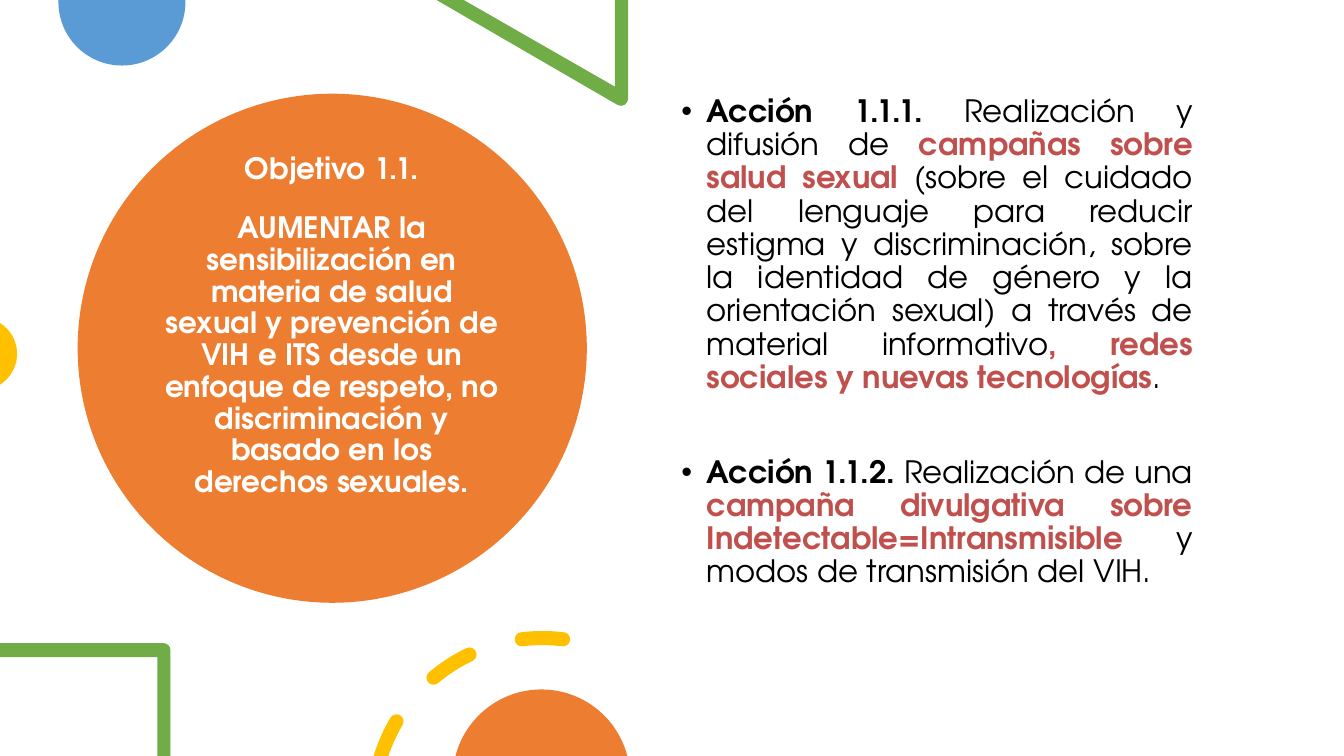
from dataclasses import dataclass
from math import cos, radians, sin, tan

from lxml.etree import SubElement
from pptx import Presentation
from pptx.dml.color import RGBColor
from pptx.enum.shapes import MSO_SHAPE
from pptx.enum.text import MSO_ANCHOR, MSO_AUTO_SIZE, PP_ALIGN
from pptx.oxml.ns import qn
from pptx.util import Inches, Pt

FONT = "TeX Gyre Adventor"
ORANGE, BLUE, GREEN, GOLD = "ED7D31", "5B9BD5", "70AD47", "FFC000"
BLACK, WHITE, RED = "000000", "FFFFFF", "C0504D"
# A step of two numbers is a straight line, one of six a cubic curve.
Steps = list[tuple[float, ...]]


@dataclass
class Outline:
    fill: str
    rings: list[Steps]


@dataclass
class Run:
    text: str
    color: str = BLACK
    bold: bool = False


@dataclass
class Item:
    runs: list[Run]
    format: dict
    bullet: bool = False


def arc(x: float, y: float, size: float, start: float, end: float,
        parts: int = 1) -> Steps:
    """Circle arc as curves, with angles in degrees clockwise from the right."""
    turn = radians(end - start) / parts
    pull = size * 4 / 3 * tan(turn / 4)
    steps: Steps = [(x + size * cos(radians(start)), y + size * sin(radians(start)))]
    for i in range(parts):
        a = radians(start) + turn * i
        b = a + turn
        ax, ay = x + size * cos(a), y + size * sin(a)
        bx, by = x + size * cos(b), y + size * sin(b)
        steps.append((ax - pull * sin(a), ay + pull * cos(a),
                      bx + pull * sin(b), by - pull * cos(b), bx, by))
    return steps


def dash(start: float, end: float, cut: float | None = None) -> Steps:
    """Round-ended piece of the gold ring; cut is the inner angle of a flat start."""
    x, y, mid, half = 5.38, 8.01, 1.68, 0.07

    def cap(turn: float, first: float) -> Steps:
        t = radians(turn)
        return arc(x + mid * cos(t), y + mid * sin(t), half, first, first + 180, 2)[1:]

    inner = start if cut is None else cut
    steps = (arc(x, y, mid + half, start, end) + cap(end, end)
             + arc(x, y, mid - half, end, inner)[1:])
    return steps + cap(start, start + 180) if cut is None else steps


def tint(target, color: str) -> None:
    """Give a fill or a font a solid colour."""
    if hasattr(target, "solid"):
        target.solid()
        target.fore_color.rgb = RGBColor.from_string(color)
    else:
        target.color.rgb = RGBColor.from_string(color)


def paint(shape, color: str) -> None:
    shape.shadow.inherit = False
    tint(shape.fill, color)
    shape.line.fill.background()


def draw(shapes, outline: Outline) -> None:
    rings = [[tuple(Inches(n) for n in step) for step in ring]
             for ring in outline.rings]
    pen = shapes.build_freeform(*rings[0][0])
    for i, ring in enumerate(rings):
        if i:
            pen.move_to(*ring[0])
        pen.add_line_segments([step[-2:] for step in ring[1:]], close=True)
    shape = pen.convert_to_shape()
    paint(shape, outline.fill)

    lines = list(shape.element.iter(qn("a:lnTo")))
    steps = [step for ring in rings for step in ring[1:]]
    for line, step in zip(lines, steps):
        if len(step) == 6:
            line.tag = qn("a:cubicBezTo")
            line.remove(line[0])
            for x, y in zip(step[::2], step[1::2]):
                SubElement(line, qn("a:pt"), x=str(x - shape.left), y=str(y - shape.top))


def add_bullet(para) -> None:
    props = para._p.get_or_add_pPr()
    props.set("marL", str(Inches(0.25)))
    props.set("indent", str(Inches(-0.25)))
    tone = SubElement(props, qn("a:buClr"))
    SubElement(tone, qn("a:srgbClr"), val=BLACK)
    SubElement(props, qn("a:buFont"), typeface="Arial")
    SubElement(props, qn("a:buChar"), char="•")


def write(shape, box: tuple, frame: dict, items: list[Item], size: float) -> None:
    for name, value in zip(("left", "top", "width", "height"), box):
        setattr(shape, name, Inches(value))
    text = shape.text_frame
    for name, value in frame.items():
        setattr(text, name, value)
    for i, item in enumerate(items):
        para = text.add_paragraph() if i else text.paragraphs[0]
        for name, value in item.format.items():
            setattr(para, name, value)
        if item.bullet:
            add_bullet(para)
        for part in item.runs:
            run = para.add_run()
            run.text = part.text
            style = {"name": FONT, "size": Pt(size), "bold": part.bold}
            for name, value in style.items():
                setattr(run.font, name, value)
            tint(run.font, part.color)


FRAME = {"word_wrap": True, "auto_size": MSO_AUTO_SIZE.NONE,
         "margin_left": Inches(0.1), "margin_right": Inches(0.1),
         "margin_top": Inches(0.05), "margin_bottom": Inches(0.05),
         "vertical_anchor": MSO_ANCHOR.TOP}
CENTER = {"alignment": PP_ALIGN.CENTER, "line_spacing": 0.9, "space_before": Pt(0)}
SPREAD = {"alignment": PP_ALIGN.JUSTIFY, "line_spacing": 0.9}

GOAL = [
    Item([Run("Objetivo 1.1.", WHITE, True)], CENTER),
    Item([Run("AUMENTAR la sensibilización en materia de salud sexual y prevención "
              "de VIH e ITS desde un enfoque de respeto, no discriminación y basado "
              "en los derechos sexuales.", WHITE, True)],
         CENTER | {"space_before": Pt(19.5)}),
]
ACTIONS = [
    Item([Run("Acción 1.1.1.", bold=True),
          Run(" Realización y difusión de "),
          Run("campañas sobre salud sexual ", RED, True),
          Run("(sobre el cuidado del lenguaje para reducir estigma y discriminación, "
              "sobre la identidad de género y la orientación sexual) a través de "
              "material informativo"),
          Run(", redes sociales y nuevas tecnologías", RED, True),
          Run(".")], SPREAD, True),
    Item([Run("Acción 1.1.2.", bold=True),
          Run(" Realización de una "),
          Run("campaña divulgativa sobre Indetectable=Intransmisible ", RED, True),
          Run("y modos de transmisión del VIH.")],
         SPREAD | {"space_before": Pt(44)}, True),
]
OUTLINES = [
    Outline(BLUE, [[(1.84, 0), (0.58, 0), *arc(1.21, 0.02, 0.63, 180, 0, 2)]]),
    Outline(GREEN, [[(6.23, 0), (6.1, 0), (6.1, 0.86), (4.6, 0), (4.33, 0),
                     *arc(6.16, 0.98, 0.07, 120, 0, 2)]]),
    Outline(GOLD, [arc(-0.19, 3.51, 0.36, -58, 58, 2)]),
    Outline(GREEN, [[(0, 6.38), *arc(1.62, 6.45, 0.07, -90, 0), (1.69, 7.5),
                     (1.56, 7.5), (1.56, 6.52), (0, 6.52)]]),
    Outline(GOLD, [dash(197, 210.5, 198.5), dash(230, 244.5), dash(263, 277)]),
    Outline(ORANGE, [arc(5.37, 7.72, 0.88, 194.5, 345.5, 2)]),
]


def main() -> None:
    deck = Presentation()
    deck.slide_width, deck.slide_height = Inches(13.33), Inches(7.5)
    slide = deck.slides.add_slide(deck.slide_layouts[5])
    shapes = slide.shapes
    tint(slide.background.fill, WHITE)

    disc = shapes.add_shape(MSO_SHAPE.OVAL, Inches(0.77), Inches(0.93),
                            Inches(5.05), Inches(5.05))
    paint(disc, ORANGE)
    title = shapes.title
    title.element.addprevious(disc.element)
    middle = {"vertical_anchor": MSO_ANCHOR.MIDDLE, "margin_bottom": Inches(0.71)}
    write(title, (1.52, 1.35, 3.54, 4.44), FRAME | middle, GOAL, 21)

    for outline in OUTLINES[:3]:
        draw(shapes, outline)
    write(shapes.add_textbox(0, 0, 0, 0), (6.66, 0.9, 5.27, 5.35), FRAME, ACTIONS, 22)
    for outline in OUTLINES[3:]:
        draw(shapes, outline)
    deck.save("out.pptx")


if __name__ == "__main__":
    main()
